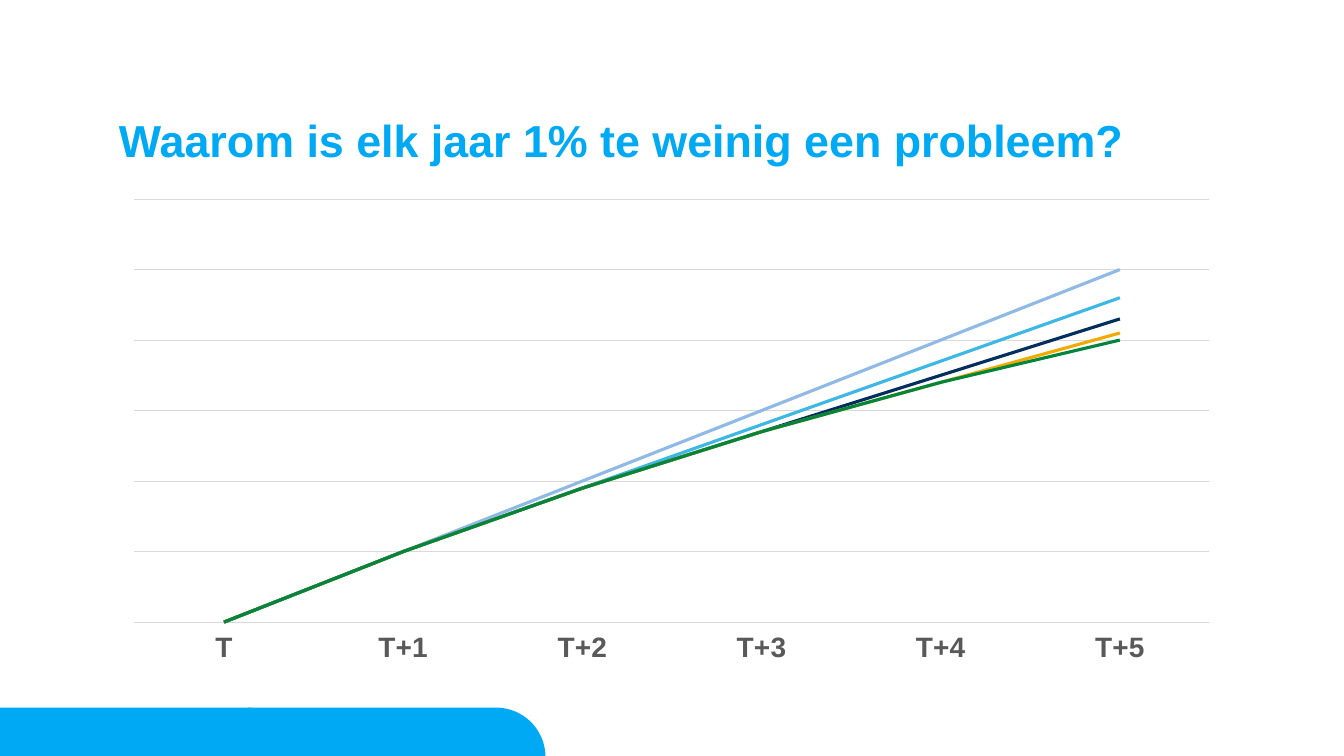
from math import cos, pi, sin

from lxml import etree
from pptx import Presentation
from pptx.chart.data import CategoryChartData
from pptx.dml.color import RGBColor
from pptx.enum.chart import XL_CHART_TYPE, XL_TICK_LABEL_POSITION, XL_TICK_MARK
from pptx.enum.text import MSO_ANCHOR, PP_ALIGN
from pptx.oxml.ns import qn
from pptx.util import Inches, Pt

LINE_CHART = XL_CHART_TYPE.LINE
NO_TICKS = XL_TICK_MARK.NONE
LABELS_LOW = XL_TICK_LABEL_POSITION.LOW
TOP = MSO_ANCHOR.TOP
LEFT = PP_ALIGN.LEFT

FONT = "Arial"
BLUE = "00A9F3"
GRID = "D9D9D9"
TITLE = "Waarom is elk jaar 1% te weinig een probleem?"
YEARS = ["T", "T+1", "T+2", "T+3", "T+4", "T+5"]
SERIES = [
    ("Series 1", "8EBAE5", (0, 20, 40, 60, 80, 100)),
    ("Series 2", "3DB7E4", (0, 20, 38, 56, 74, 92)),
    ("Series 3", "002F5F", (0, 20, 38, 54, 70, 86)),
    ("Series 4", "F0AB00", (0, 20, 38, 54, 68, 82)),
    ("Series 5", "00853C", (0, 20, 38, 54, 68, 80)),
]
PLOT_LAYOUT = [
    ("layoutTarget", "inner"), ("xMode", "edge"), ("yMode", "edge"),
    ("x", "0.014"), ("y", "0"), ("w", "0.972"), ("h", "0.854"),
]
BAND_LEFTS = (-0.01, 2.46)
BAND_WIDTH, BAND_BOTTOM, BAND_RADIUS = 2.95, 7.51, 0.49
ARC_STEPS = 32


def color(value):
    return RGBColor.from_string(value)


def style_font(font, size, value, bold):
    font.name = FONT
    font.size = Pt(size)
    font.bold = bold
    font.color.rgb = color(value)


def style_line(line, value, width):
    line.color.rgb = color(value)
    line.width = Pt(width)


def add_band(page, left):
    center = left + BAND_WIDTH - BAND_RADIUS
    angles = [pi / 2 * (1 - step / ARC_STEPS) for step in range(ARC_STEPS + 1)]
    corner = [(center + BAND_RADIUS * cos(angle), BAND_BOTTOM - BAND_RADIUS * sin(angle))
              for angle in angles]
    outline = [(left, BAND_BOTTOM - BAND_RADIUS)] + corner
    builder = page.shapes.build_freeform(Inches(left), Inches(BAND_BOTTOM))
    builder.add_line_segments([(Inches(x), Inches(y)) for x, y in outline], close=True)
    band = builder.convert_to_shape()
    band.shadow.inherit = False
    band.fill.solid()
    band.fill.fore_color.rgb = color(BLUE)
    band.line.fill.background()


def add_title(page):
    title = page.shapes.title
    title.left, title.top = Inches(1.18), Inches(1.18)
    title.width, title.height = Inches(10.97), Inches(0.79)
    frame = title.text_frame
    frame.word_wrap = True
    frame.vertical_anchor = TOP
    frame.margin_left = frame.margin_right = frame.margin_top = frame.margin_bottom = 0
    para = frame.paragraphs[0]
    para.alignment = LEFT
    para.line_spacing = 0.9
    span = para.add_run()
    span.text = TITLE
    style_font(span.font, 32, BLUE, True)


def place_plot(chart):
    plot_area = chart.element.find(".//" + qn("c:plotArea"))
    for old_layout in plot_area.findall(qn("c:layout")):
        plot_area.remove(old_layout)
    layout = etree.Element(qn("c:layout"))
    manual = etree.SubElement(layout, qn("c:manualLayout"))
    for name, value in PLOT_LAYOUT:
        etree.SubElement(manual, qn("c:" + name)).set("val", value)
    plot_area.insert(0, layout)


def add_growth_chart(page):
    data = CategoryChartData()
    data.categories = YEARS
    for name, _, values in SERIES:
        data.add_series(name, values)
    chart = page.shapes.add_chart(
        LINE_CHART, Inches(1.18), Inches(1.97), Inches(10.97), Inches(4.92), data).chart
    chart.has_legend = False
    chart.has_title = False
    style_font(chart.font, 10, "000000", False)
    place_plot(chart)

    years = chart.category_axis
    years.major_tick_mark = years.minor_tick_mark = NO_TICKS
    years.tick_label_position = LABELS_LOW
    style_font(years.tick_labels.font, 20, "595959", True)
    style_line(years.format.line, GRID, 0.75)

    amounts = chart.value_axis
    amounts.minimum_scale, amounts.maximum_scale = 0, 120
    amounts.major_unit = 20
    amounts.has_major_gridlines = True
    style_line(amounts.major_gridlines.format.line, GRID, 0.75)
    amounts.visible = False

    chart.plots[0].vary_by_categories = False
    for series, (_, value, _) in zip(chart.plots[0].series, SERIES):
        series.smooth = False
        style_line(series.format.line, value, 2.25)


def main():
    deck = Presentation()
    deck.slide_width, deck.slide_height = Inches(13.33), Inches(7.5)
    page = deck.slides.add_slide(deck.slide_layouts[5])
    for left in BAND_LEFTS:
        add_band(page, left)
    add_title(page)
    add_growth_chart(page)
    deck.save("out.pptx")


if __name__ == "__main__":
    main()
